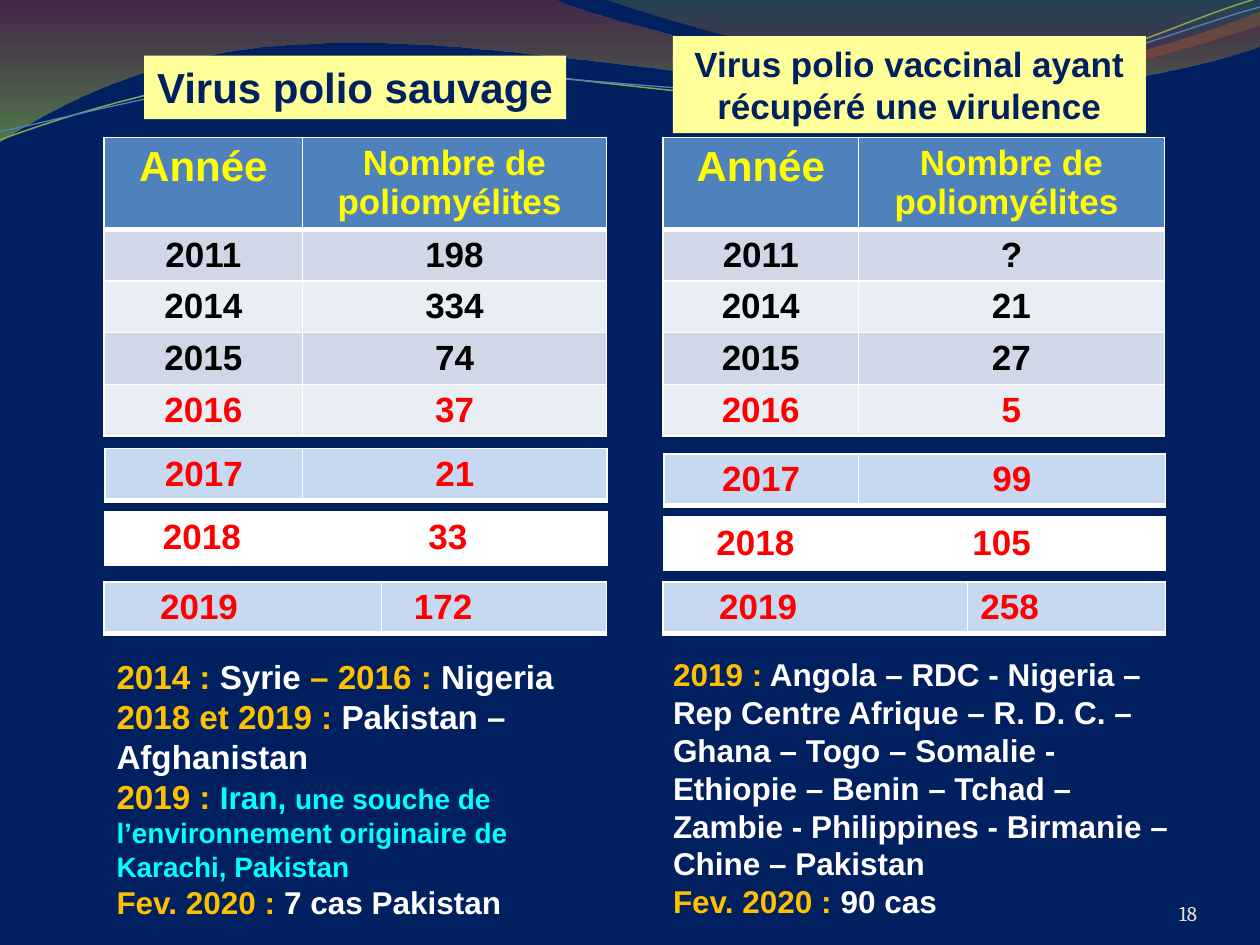
"""Build a slide comparing wild and vaccine-derived polio case counts by year."""
from dataclasses import dataclass
from typing import NamedTuple, Optional

import lxml.etree
import pptx
import pptx.dml.color
import pptx.enum.shapes
import pptx.enum.text
import pptx.oxml.ns
import pptx.util

Pt = pptx.util.Pt
ALIGN = pptx.enum.text.PP_ALIGN
ANCHOR = pptx.enum.text.MSO_ANCHOR
qn = pptx.oxml.ns.qn
WHITE, RED, YELLOW, AMBER, CYAN = "FFFFFF", "FF0000", "FFFF00", "FFC000", "00FFFF"
NAVY, BLUE, PALE, LIGHT, SKY = "002060", "4F81BD", "E9EDF4", "D0D8E8", "C6D9F1"


class Run(NamedTuple):
    text: str
    size: float
    color: str
    font: str = "Arial"


class Box(NamedTuple):
    left: float
    top: float
    width: float
    height: float


class Cell(NamedTuple):
    run: Run
    fill: str
    align: ALIGN = ALIGN.CENTER
    indent: float = 7.2
    anchor: ANCHOR = ANCHOR.MIDDLE


@dataclass
class YearTable:
    left: float
    top: float
    columns: tuple
    rows: list
    heights: tuple = (29.5,)


@dataclass
class Wave:
    start: tuple
    segments: list
    stops: tuple = ()
    line: Optional[tuple] = None
    rotation: float = 0


def rgb(color: str):
    return pptx.dml.color.RGBColor.from_string(color)


def add_run(paragraph, run: Run) -> None:
    piece = paragraph.add_run()
    piece.text = run.text
    piece.font.size = Pt(run.size)
    piece.font.name = run.font
    piece.font.bold = run.font == "Arial"
    piece.font.color.rgb = rgb(run.color)


def bend_segments(shape, segments: list) -> None:
    """Join the three straight steps of every six-number segment into one cubic curve."""
    steps = iter(list(shape.element.spPr.iter(qn("a:lnTo"))))
    for segment in segments:
        first = next(steps)
        if len(segment) == 6:
            first.tag = qn("a:cubicBezTo")
            for _ in range(2):
                step = next(steps)
                first.append(step[0])
                step.getparent().remove(step)


def add_wave(slide, wave: Wave) -> None:
    points = [segment[i:i + 2] for segment in wave.segments for i in range(0, len(segment), 2)]
    builder = slide.shapes.build_freeform(*wave.start, scale=Pt(1) / 100)
    builder = slide.shapes.build_freeform(*(100 * value for value in wave.start), scale=Pt(1) / 100)
    builder.add_line_segments([(100 * x, 100 * y) for x, y in points], close=bool(wave.stops))
    shape = builder.convert_to_shape()
    shape.shadow.inherit = False
    shape.rotation = wave.rotation
    bend_segments(shape, wave.segments)
    if wave.line:
        shape.fill.background()
        shape.line.color.rgb = rgb(wave.line[0])
        shape.line.width = Pt(wave.line[1])
        return
    shape.line.fill.background()
    shape.fill.gradient()
    shape.fill.gradient_angle = 270
    for stop, (position, color, _) in zip(shape.fill.gradient_stops, wave.stops):
        stop.position = position
        stop.color.rgb = rgb(color)
    colors = shape.element.spPr.iter(qn("a:srgbClr"))
    for element, (_, _, opacity) in zip(list(colors), wave.stops):
        lxml.etree.SubElement(element, qn("a:alpha")).set("val", str(opacity * 1000))


def set_borders(cell, top: float, bottom: float) -> None:
    properties = cell._tc.get_or_add_tcPr()
    for index, (side, width) in enumerate(zip("LRTB", (1, 1, top, bottom))):
        line = lxml.etree.Element(qn("a:ln" + side), w=str(int(Pt(width))))
        fill = lxml.etree.SubElement(line, qn("a:solidFill"))
        lxml.etree.SubElement(fill, qn("a:srgbClr")).set("val", WHITE)
        properties.insert(index, line)


def add_year_table(slide, data: YearTable) -> None:
    frame = slide.shapes.add_table(
        len(data.rows), len(data.columns), Pt(data.left), Pt(data.top),
        Pt(sum(data.columns)), Pt(sum(data.heights)))
    table = frame.table
    table.first_row = table.horz_banding = False
    for column, width in zip(table.columns, data.columns):
        column.width = Pt(width)
    for row_index, (row, height) in enumerate(zip(data.rows, data.heights)):
        table.rows[row_index].height = Pt(height)
        for column_index, content in enumerate(row):
            cell = table.cell(row_index, column_index)
            cell.fill.solid()
            cell.fill.fore_color.rgb = rgb(content.fill)
            cell.vertical_anchor = content.anchor
            cell.margin_left = Pt(content.indent)
            paragraph = cell.text_frame.paragraphs[0]
            paragraph.alignment = content.align
            add_run(paragraph, content.run)
            set_borders(cell, 3 if row_index == 1 else 1, 3 if row_index == 0 else 1)


def add_text(slide, box: Box, paragraphs: list, align=ALIGN.LEFT, fill: str = "",
             inset: Optional[float] = None, anchor=ANCHOR.TOP) -> None:
    place = [Pt(length) for length in box]
    if fill:
        shape = slide.shapes.add_shape(pptx.enum.shapes.MSO_SHAPE.RECTANGLE, *place)
        shape.shadow.inherit = False
        shape.fill.solid()
        shape.fill.fore_color.rgb = rgb(fill)
        shape.line.fill.background()
    else:
        shape = slide.shapes.add_textbox(*place)
    frame = shape.text_frame
    frame.word_wrap = True
    frame.vertical_anchor = anchor
    if inset is not None:
        frame.margin_left = frame.margin_right = Pt(inset)
        frame.margin_top = frame.margin_bottom = Pt(inset)
    for index, runs in enumerate(paragraphs):
        paragraph = frame.add_paragraph() if index else frame.paragraphs[0]
        paragraph.alignment = align
        for run in runs:
            add_run(paragraph, run)


def yearly_rows(counts: tuple) -> list:
    rows = [[Cell(Run("Année", 24, YELLOW), BLUE, anchor=ANCHOR.TOP),
             Cell(Run("Nombre de poliomyélites ", 20, YELLOW), BLUE, anchor=ANCHOR.TOP)]]
    for index, (year, count) in enumerate(zip(("2011", "2014", "2015", "2016"), counts)):
        color = RED if year == "2016" else "000000"
        fill = PALE if index % 2 else LIGHT
        rows.append([Cell(Run(text, 20, color), fill) for text in (year, count)])
    return rows


def single_row(year: str, count: str, fill: str, align=ALIGN.CENTER, indents=(7.2, 7.2)) -> list:
    return [[Cell(Run(text, 20, RED), fill, align, indent)
             for text, indent in zip((year, count), indents)]]


WAVES = [
    Wave((0, 0), [(317, -0.5), (343, 12, 478, 45, 546, 45), (614, 45, 690, 19, 720, 6.5),
                  (720.5, 26), (708, 32, 626, 55, 537, 54), (448, 54, 275, 20, 185, 24.5),
                  (93, 26, 33, 60, -0.5, 81)], stops=((0, "973330", 45), (1, "95C238", 55))),
    Wave((345, -0.5), [(366, 8, 491, 45, 554, 47), (616, 50, 692, 23, 720, 15), (720, 0)],
         stops=((0, "769537", 30), (0.8, "BE3330", 45))),
    Wave((-1.4, 63), [(34.1, 51.7, 114.3, 29.4, 199.4, 29.4), (284.4, 30.4, 425.9, 67.2, 512, 65.2),
                      (599.3, 62.3, 676.1, 25.9, 720.6, 16)], line=("89A54F", 0.85), rotation=357.3),
    Wave((-1.1, 58.1), [(33.1, 53.6, 118.2, 32.6, 204.3, 32.7), (290.3, 33.7, 429.1, 63.3, 515.3, 61.4),
                        (601.5, 59.4, 678.9, 30, 721.4, 21)], line=(BLUE, 0.75), rotation=357.3),
]
HEIGHTS = (52.5,) + (29.5,) * 4
TABLES = [
    YearTable(59.5, 78.5, (113.5, 173.5), yearly_rows(("198", "334", "74", "37")), HEIGHTS),
    YearTable(60, 256.3, (113, 174), single_row("2017", "21", SKY)),
    YearTable(60, 292.5, (88.5, 198.5), single_row("2018", "33", WHITE, indents=(29.5, 23.5))),
    YearTable(379, 78.5, (111.5, 175), yearly_rows(("?", "21", "27", "5")), HEIGHTS),
    YearTable(379.5, 259.3, (111, 175.5), single_row("2017", "99", SKY)),
    YearTable(379.5, 295.5, (88.5, 198), single_row("2018", "105", WHITE, indents=(23, 18))),
    YearTable(59.5, 332.5, (158.5, 128.5), single_row("2019", "172", SKY, ALIGN.LEFT, (32, 18.5))),
    YearTable(379, 332.5, (174, 113), single_row("2019", "258", SKY, ALIGN.LEFT, (32, 7.2))),
]
WILD_NOTES = [
    [Run("2014 : ", 19, AMBER), Run("Syrie", 19, WHITE), Run(" – 2016 : ", 19, AMBER),
     Run("Nigeria", 19, WHITE)],
    [Run("2018 et 2019 : ", 19, AMBER), Run("Pakistan – Afghanistan", 19, WHITE)],
    [Run("2019 : ", 19, AMBER), Run("Iran, ", 18, CYAN),
     Run("une souche de l’environnement originaire de Karachi, Pakistan", 16, CYAN)],
    [Run("Fev. 2020 : ", 18, AMBER), Run("7 cas Pakistan", 18, WHITE)],
]
VACCINE_NOTES = [
    [Run("2019 :", 18, AMBER),
     Run(" Angola – RDC - Nigeria – Rep Centre Afrique – R. D. C. – Ghana – Togo – Somalie - "
         "Ethiopie – Benin – Tchad – Zambie - Philippines - Birmanie – Chine – Pakistan", 18, WHITE)],
    [Run("Fev. 2020 : ", 18, AMBER), Run("90 cas", 18, WHITE)],
]
TITLES = [
    (Box(82.3, 31.8, 241.2, 36.3), Run("Virus polio sauvage", 24, NAVY)),
    (Box(384.5, 20.6, 270.3, 55.5), Run("Virus polio vaccinal ayant récupéré une virulence", 20, NAVY)),
]


def main() -> None:
    presentation = pptx.Presentation()
    presentation.slide_width, presentation.slide_height = Pt(720), Pt(540)
    slide = presentation.slides.add_slide(presentation.slide_layouts[6])
    slide.background.fill.solid()
    slide.background.fill.fore_color.rgb = rgb(NAVY)
    for wave in WAVES:
        add_wave(slide, wave)
    for table in TABLES:
        add_year_table(slide, table)
    add_text(slide, Box(59.5, 371.5, 294.5, 165), WILD_NOTES)
    add_text(slide, Box(377.5, 371, 306, 160), VACCINE_NOTES)
    for box, run in TITLES:
        add_text(slide, box, [[run]], ALIGN.CENTER, "FFFF99")
    add_text(slide, Box(624, 500.5, 60, 28.5), [[Run("18", 12, "E3E1D7", "Cambria")]],
             ALIGN.RIGHT, inset=0, anchor=ANCHOR.BOTTOM)
    presentation.save("out.pptx")


if __name__ == "__main__":
    main()
